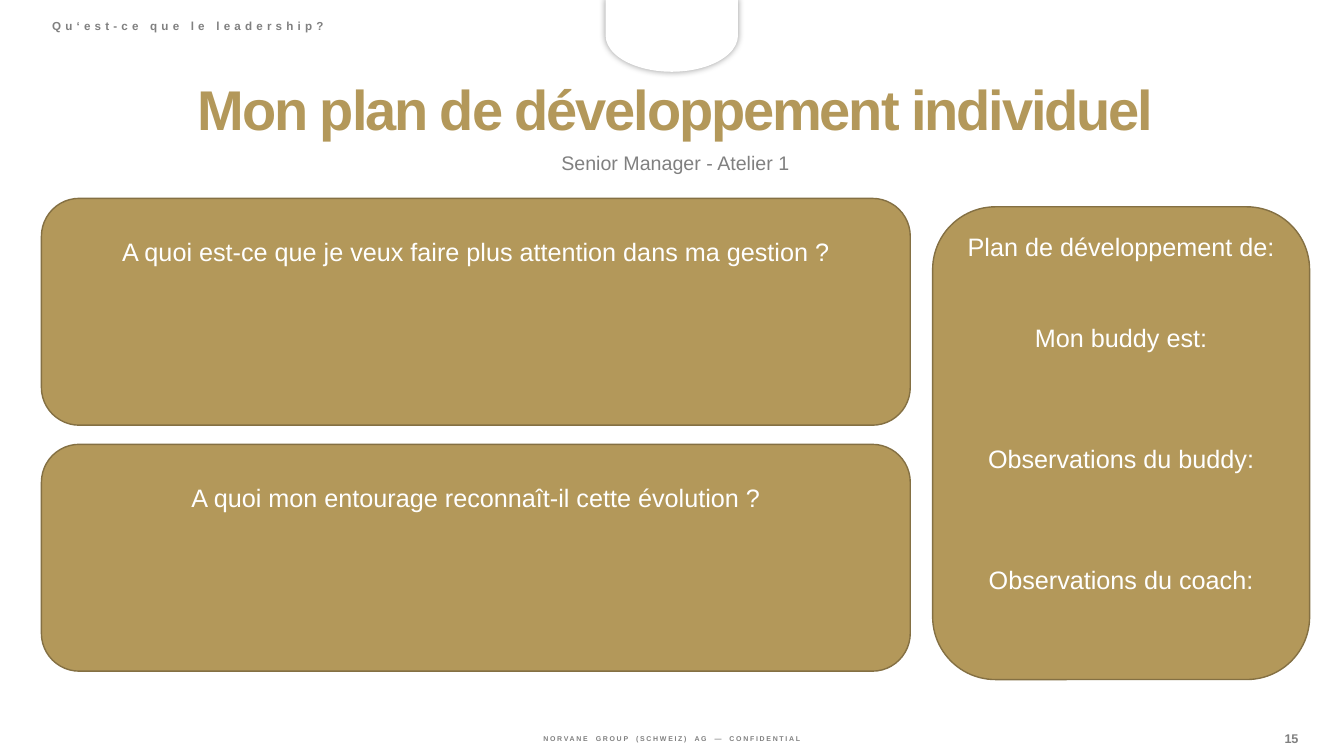
from lxml.etree import SubElement
from pptx import Presentation
from pptx.dml.color import RGBColor
from pptx.enum.shapes import MSO_SHAPE
from pptx.enum.text import MSO_ANCHOR, MSO_AUTO_SIZE, PP_ALIGN
from pptx.oxml.ns import qn
from pptx.util import Pt

GOLD, DARK_GOLD, GREY, WHITE = "B3985A", "847043", "808080", "FFFFFF"


def color(hex_value):
    return RGBColor.from_string(hex_value)


def write(paragraph, text, size=18, fill=GREY, bold=False, spacing=0,
          align=PP_ALIGN.CENTER, line=1.0, before=0):
    paragraph.alignment = align
    paragraph.line_spacing = line
    paragraph.space_before = Pt(before)
    run = paragraph.add_run()
    run.text = text
    run.font.name = "Arial"
    run.font.size = Pt(size)
    run.font.bold = bold
    run.font.color.rgb = color(fill)
    if spacing:
        run._r.get_or_add_rPr().set("spc", str(round(spacing * 100)))


def place(shape, left, top, width, height):
    shape.left, shape.top = Pt(left), Pt(top)
    shape.width, shape.height = Pt(width), Pt(height)


def fill_placeholder(holder, box, text, anchor, **style):
    place(holder, *box)
    frame = holder.text_frame
    frame.word_wrap = True
    frame.auto_size = MSO_AUTO_SIZE.NONE
    frame.vertical_anchor = anchor
    write(frame.paragraphs[0], text, **style)


def add_label(slide, box, text, margin=0, **style):
    frame = slide.shapes.add_textbox(*map(Pt, box)).text_frame
    frame.word_wrap = True
    frame.margin_left = frame.margin_right = Pt(margin)
    frame.margin_top = frame.margin_bottom = Pt(margin / 2)
    write(frame.paragraphs[0], text, **style)
    return frame.paragraphs[0]


def add_footer(slide):
    """Letterspaced words with wider gaps between them."""
    first, *others = "NORVANE GROUP (SCHWEIZ) AG — CONFIDENTIAL".split()
    style = {"size": 5, "bold": True}
    footer = add_label(slide, (297.4, 524.9, 365, 7.3), first,
                       spacing=1.2, **style)
    for word in others:
        write(footer, " ", spacing=3, **style)
        write(footer, word, spacing=1.2, **style)


def add_filled_shape(slide, preset, box, fill, outline):
    shape = slide.shapes.add_shape(preset, *map(Pt, box))
    shape.shadow.inherit = False
    shape.fill.solid()
    shape.fill.fore_color.rgb = color(fill)
    shape.line.color.rgb = color(outline)
    shape.line.width = Pt(1)
    return shape


def add_tab(slide):
    tab = add_filled_shape(slide, MSO_SHAPE.FLOWCHART_DELAY,
                           (454.3, -21.6, 51.1, 93.6), WHITE, WHITE)
    tab.rotation = 90
    effects = tab._element.spPr.find(qn("a:effectLst"))
    glow = SubElement(effects, qn("a:outerShdw"), blurRad=str(Pt(5)),
                      dist="0", dir="0", algn="ctr", rotWithShape="0")
    black = SubElement(glow, qn("a:srgbClr"), val="000000")
    SubElement(black, qn("a:alpha"), val="40000")


def add_card(slide, box, prompts, top_margin):
    """Prompts are pairs of text and the writing space above it."""
    card = add_filled_shape(slide, MSO_SHAPE.ROUNDED_RECTANGLE, box,
                            GOLD, DARK_GOLD)
    frame = card.text_frame
    frame.word_wrap = True
    frame.vertical_anchor = MSO_ANCHOR.TOP
    frame.margin_top = Pt(top_margin)
    for index, (prompt, gap) in enumerate(prompts):
        paragraph = frame.add_paragraph() if index else frame.paragraphs[0]
        write(paragraph, prompt, fill=WHITE, before=gap)


def main():
    deck = Presentation()
    deck.slide_width, deck.slide_height = Pt(960), Pt(540)
    slide = deck.slides.add_slide(deck.slide_layouts[0])

    # Frame of the page: footer, tab, page number, chapter
    add_footer(slide)
    add_tab(slide)
    add_label(slide, (895.2, 522, 54.7, 11.5), "15", size=9, bold=True,
              spacing=-0.1)
    add_label(slide, (30.2, 12.2, 350.6, 15.1),
              "Qu‘est-ce que le leadership?", margin=7.2, size=8.3,
              bold=True, spacing=3, align=PP_ALIGN.LEFT, line=0.8)

    # Title and subtitle
    title, subtitle = slide.placeholders
    fill_placeholder(title, (29.6, 54.7, 905.8, 51.1),
                     "Mon plan de développement individuel",
                     MSO_ANCHOR.MIDDLE, size=40, fill=GOLD, bold=True,
                     spacing=-1.5, line=0.9)
    fill_placeholder(subtitle, (29.6, 107.3, 905.8, 22.3),
                     "Senior Manager - Atelier 1", MSO_ANCHOR.TOP,
                     size=14, line=0.8)

    # People and their observations
    add_card(slide, (666.2, 147.7, 269.3, 337.7),
             [("Plan de développement de:", 0), ("Mon buddy est:", 43.3),
              ("Observations du buddy:", 64.9),
              ("Observations du coach:", 64.9)], top_margin=4.4)

    # Questions to oneself
    questions = ["A quoi est-ce que je veux faire plus attention dans ma gestion ?",
                 "A quoi mon entourage reconnaît-il cette évolution ?"]
    for row, question in enumerate(questions):
        add_card(slide, (29.6, 141.7 + row * 175.7, 620.6, 162),
                 [(question, 0)], top_margin=19.5)

    deck.save("out.pptx")


if __name__ == "__main__":
    main()
